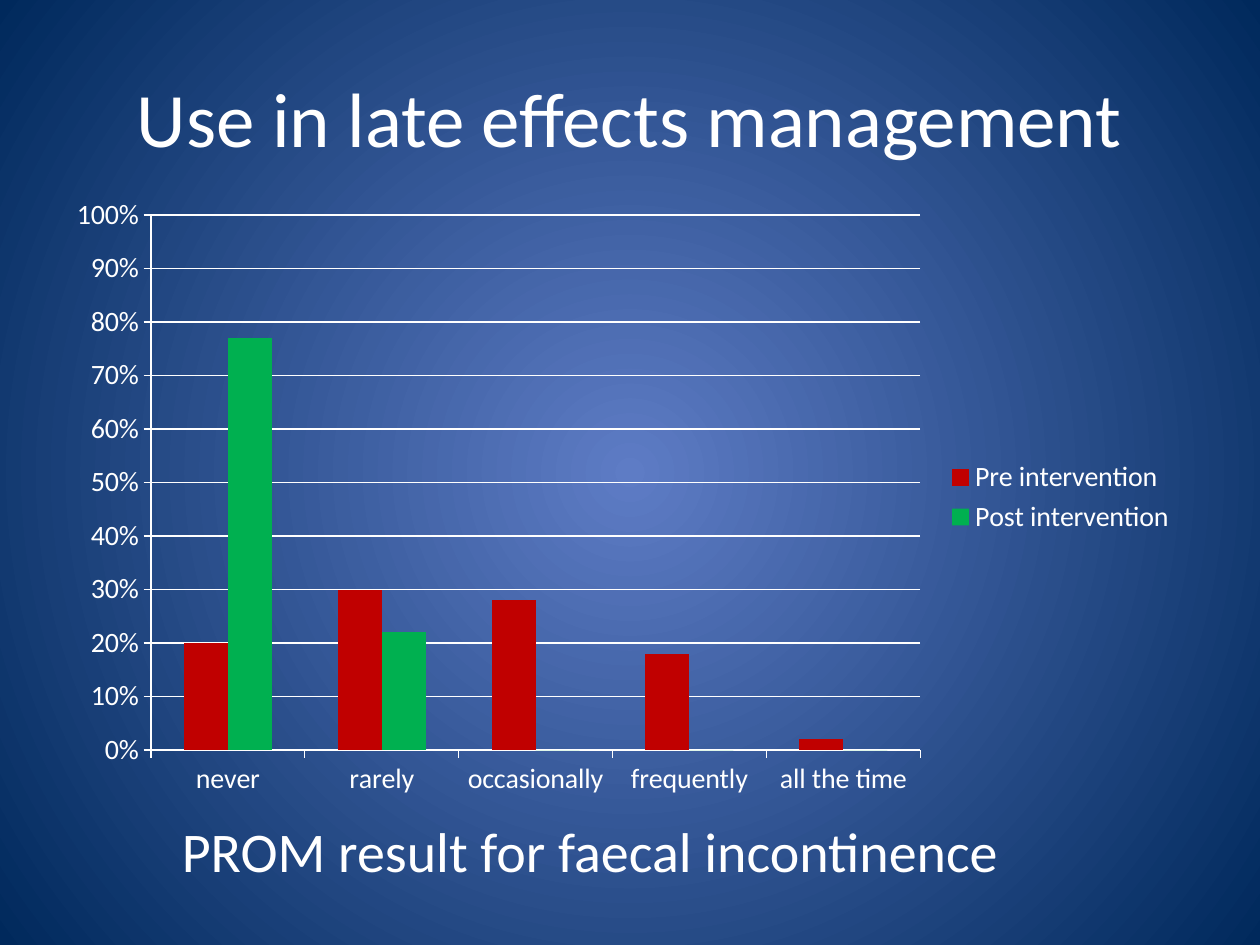
from lxml.etree import SubElement
from pptx import Presentation
from pptx.chart.data import CategoryChartData
from pptx.dml.color import RGBColor
from pptx.enum.chart import XL_CHART_TYPE, XL_LEGEND_POSITION, XL_TICK_MARK
from pptx.enum.text import MSO_ANCHOR, PP_ALIGN
from pptx.oxml.ns import qn
from pptx.util import Pt

WHITE = RGBColor(0xFF, 0xFF, 0xFF)
RED = RGBColor(0xC0, 0x00, 0x00)
GREEN = RGBColor(0x00, 0xB0, 0x50)
LIGHT_BLUE = RGBColor(0x5E, 0x7C, 0xC5)
DARK_BLUE = RGBColor(0x00, 0x29, 0x5C)


class SlideBuilder:
    """Holds the style and the current slide."""

    font_name = "Calibri"
    text_color = WHITE

    def __init__(self, slide):
        self.slide = slide

    def style_font(self, font, size):
        font.name = self.font_name
        font.size = Pt(size)
        font.color.rgb = self.text_color

    def style_line(self, line):
        line.color.rgb = self.text_color
        line.width = Pt(0.75)

    def add_radial_background(self, center_color, edge_color):
        fill = self.slide.background.fill
        fill.gradient()
        for stop, color in zip(fill.gradient_stops, (center_color, edge_color)):
            stop.color.rgb = color
        # A circular gradient replaces the default linear one
        gradient = self.slide.element.find(".//" + qn("a:gradFill"))
        gradient.remove(gradient.find(qn("a:lin")))
        circle = SubElement(gradient, qn("a:path"), {"path": "circle"})
        center = dict.fromkeys("ltrb", "50000")
        SubElement(circle, qn("a:fillToRect"), center)

    def add_text(self, text, left, top, width, height, size):
        shape = self.slide.shapes.add_textbox(Pt(left), Pt(top), Pt(width), Pt(height))
        frame = shape.text_frame
        frame.word_wrap = True
        frame.vertical_anchor = MSO_ANCHOR.MIDDLE
        paragraph = frame.paragraphs[0]
        paragraph.alignment = PP_ALIGN.CENTER
        run = paragraph.add_run()
        run.text = text
        self.style_font(run.font, size)

    def add_column_chart(self, categories, series, left, top, width, height, size):
        data = CategoryChartData(number_format="0%")
        data.categories = categories
        for name, values, _ in series:
            data.add_series(name, values)
        chart = self.slide.shapes.add_chart(
            XL_CHART_TYPE.COLUMN_CLUSTERED,
            Pt(left), Pt(top), Pt(width), Pt(height), data).chart
        chart.has_title = False
        self.style_font(chart.font, size)

        # Columns
        plot = chart.plots[0]
        plot.gap_width = 150
        plot.vary_by_categories = False
        for column_series, (_, _, color) in zip(plot.series, series):
            column_series.format.fill.solid()
            column_series.format.fill.fore_color.rgb = color

        # Axes
        for axis in (chart.category_axis, chart.value_axis):
            axis.major_tick_mark = XL_TICK_MARK.OUTSIDE
            self.style_line(axis.format.line)
        value_axis = chart.value_axis
        value_axis.minimum_scale = 0
        value_axis.maximum_scale = 1
        value_axis.major_unit = 0.1
        value_axis.tick_labels.number_format = "0%"
        value_axis.tick_labels.number_format_is_linked = False
        self.style_line(value_axis.major_gridlines.format.line)

        # Legend
        chart.has_legend = True
        chart.legend.position = XL_LEGEND_POSITION.RIGHT
        chart.legend.include_in_layout = False


def main():
    presentation = Presentation()
    presentation.slide_width = Pt(720)
    presentation.slide_height = Pt(540)
    blank_layout = presentation.slide_layouts[6]
    builder = SlideBuilder(presentation.slides.add_slide(blank_layout))

    builder.add_radial_background(LIGHT_BLUE, DARK_BLUE)

    # Title
    builder.add_text("Use in late effects management", 36, 21.6, 648, 90, 44)

    # Results before and after the intervention
    builder.add_column_chart(
        ["never", "rarely", "occasionally", "frequently", "all the time"],
        [("Pre intervention", (0.2, 0.3, 0.28, 0.18, 0.02), RED),
         ("Post intervention", (0.77, 0.22, 0, 0, 0), GREEN)],
        31, 106, 648, 356.4, 16)

    # Caption
    builder.add_text("PROM result for faecal incontinence", 82, 463, 510.5, 46, 32)

    presentation.save("out.pptx")


if __name__ == "__main__":
    main()
